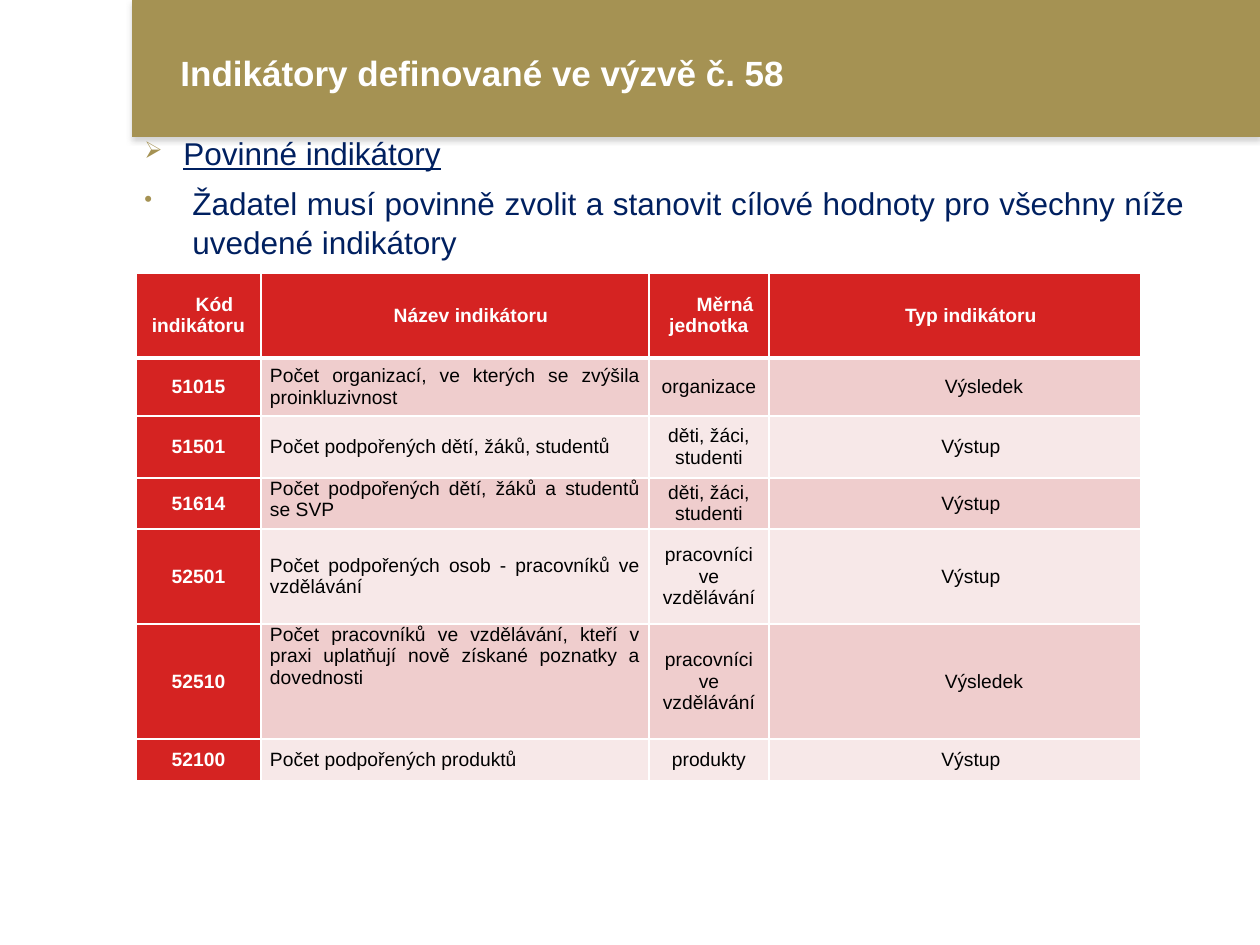
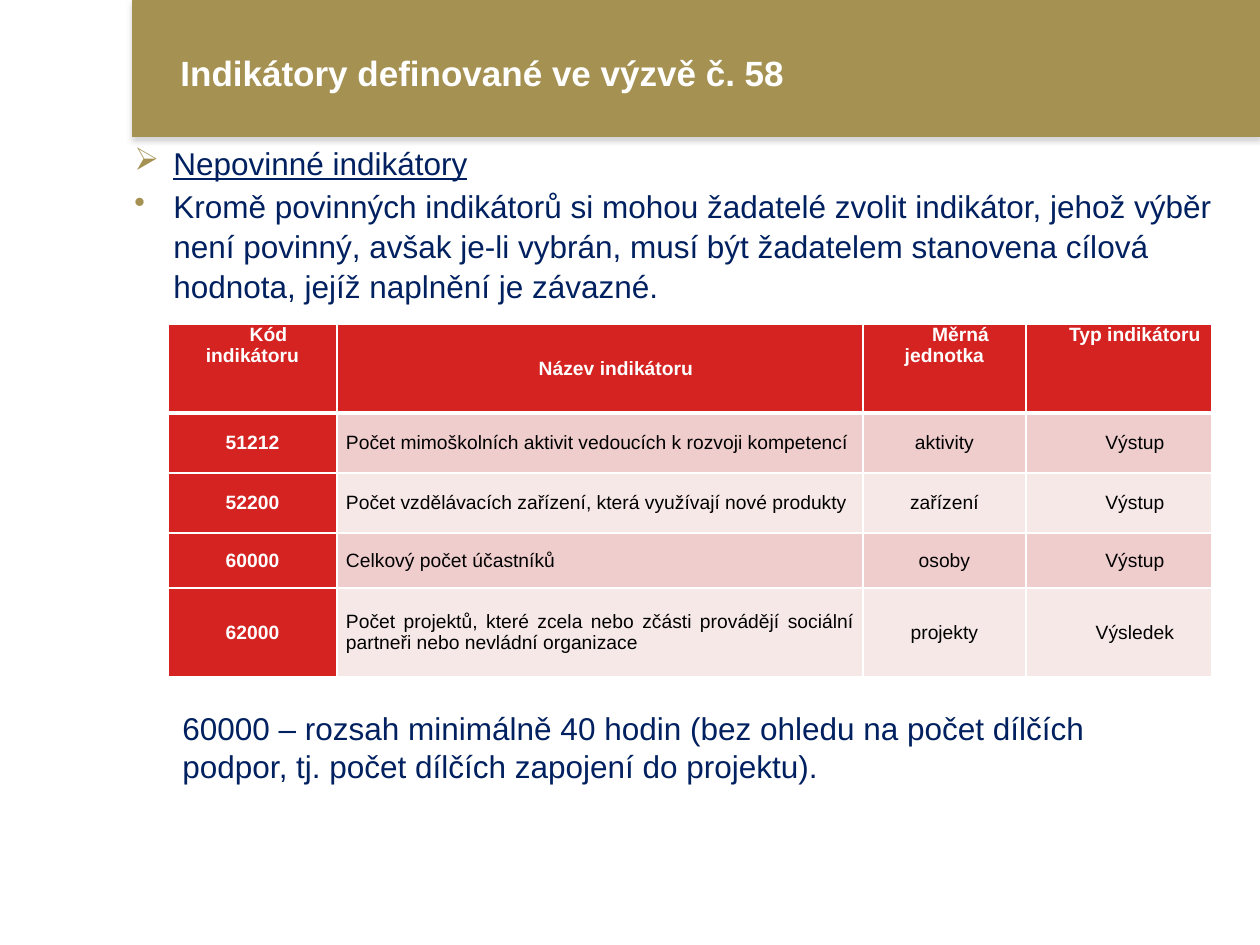
from dataclasses import dataclass

import pptx
import pptx.dml.color
import pptx.enum.shapes
import pptx.enum.text
import pptx.oxml
import pptx.oxml.ns
import pptx.util
from lxml import etree

ALIGN = pptx.enum.text.PP_ALIGN
ANCHOR = pptx.enum.text.MSO_ANCHOR
PX_PER_INCH = 126


@dataclass(frozen=True)
class Theme:
    font: str = "Arial"
    band: str = "A59253"
    shadow: str = "808080"
    body: str = "002060"
    head: str = "D52322"
    rows: tuple = ("EFCDCD", "F7E8E8")
    white: str = "FFFFFF"
    black: str = "000000"
    title_size: int = 20
    body_size: int = 18
    table_size: int = 11


THEME = Theme()
TITLE = "Indikátory definované ve výzvě č. 58"
HEADINGS = ("Kód indikátoru", "Název indikátoru", "Měrná jednotka", "Typ indikátoru")
INDENT = 32
WIDE_INDENT = 58
CELL_INSET = 9


@dataclass(frozen=True)
class Indicator:
    code: str
    name: str
    unit: str
    kind: str
    height: int
    indent: int = INDENT
    name_anchor: ANCHOR = ANCHOR.MIDDLE
    name_align: ALIGN = ALIGN.JUSTIFY


MANDATORY = (
    Indicator("51015", "Počet organizací, ve kterých se zvýšila proinkluzivnost",
              "organizace", "Výsledek", 58, WIDE_INDENT),
    Indicator("51501", "Počet podpořených dětí, žáků, studentů",
              "děti, žáci, studenti", "Výstup", 62),
    Indicator("51614", "Počet podpořených dětí, žáků a studentů se SVP",
              "děti, žáci, studenti", "Výstup", 51, name_anchor=ANCHOR.TOP),
    Indicator("52501", "Počet podpořených osob - pracovníků ve vzdělávání",
              "pracovníci ve vzdělávání", "Výstup", 95),
    Indicator("52510", "Počet pracovníků ve vzdělávání, kteří v praxi uplatňují "
              "nově získané poznatky a dovednosti",
              "pracovníci ve vzdělávání", "Výsledek", 115, WIDE_INDENT, ANCHOR.TOP),
    Indicator("52100", "Počet podpořených produktů", "produkty", "Výstup", 42),
)
OPTIONAL = (
    Indicator("51212", "Počet mimoškolních aktivit vedoucích k rozvoji kompetencí",
              "aktivity", "Výstup", 60),
    Indicator("52200", "Počet vzdělávacích zařízení, která využívají nové produkty",
              "zařízení", "Výstup", 60),
    Indicator("60000", "Celkový počet účastníků", "osoby", "Výstup", 55,
              name_align=ALIGN.LEFT),
    Indicator("62000", "Počet projektů, které zcela nebo zčásti provádějí sociální "
              "partneři nebo nevládní organizace", "projekty", "Výsledek", 89),
)


def px(n):
    return pptx.util.Emu(round(n * 914400 / PX_PER_INCH))


def rgb(color):
    return pptx.dml.color.RGBColor.from_string(color)


def add_xml(parent, tag, **attrs):
    el = etree.SubElement(parent, pptx.oxml.ns.qn(tag))
    for name, value in attrs.items():
        el.set(name, str(value))
    return el


def style(p, size, color, bold=False, underline=False):
    p.font.name = THEME.font
    p.font.size = pptx.util.Pt(size)
    p.font.color.rgb = rgb(color)
    p.font.bold = bold
    p.font.underline = underline


def text_box(slide, box):
    tf = slide.shapes.add_textbox(*map(px, box)).text_frame
    tf.word_wrap = True
    return tf


def bullet(p, char, indent, percent):
    pPr = p._p.get_or_add_pPr()
    pPr.set("marL", str(px(indent)))
    pPr.set("indent", str(px(-indent)))
    add_xml(add_xml(pPr, "a:buClr"), "a:srgbClr", val=THEME.band)
    add_xml(pPr, "a:buSzPct", val=percent * 1000)
    add_xml(pPr, "a:buChar", char=char)


def title_band(slide, box):
    x, y, w, h = box
    sp = slide.shapes.add_shape(pptx.enum.shapes.MSO_SHAPE.RECTANGLE, *map(px, box))
    sp.fill.solid()
    sp.fill.fore_color.rgb = rgb(THEME.band)
    sp.line.fill.background()
    sp.shadow.inherit = False
    effects = sp._element.spPr.find(pptx.oxml.ns.qn("a:effectLst"))
    shadow = add_xml(effects, "a:outerShdw", blurRad=pptx.util.Pt(3.1),
                     dist=pptx.util.Pt(1.8), dir=5400000, rotWithShape=0)
    add_xml(add_xml(shadow, "a:srgbClr", val=THEME.shadow), "a:alpha", val=35000)

    tf = text_box(slide, (x + 36, y + 50, w - 99, 44))
    tf.vertical_anchor = ANCHOR.MIDDLE
    p = tf.paragraphs[0]
    p.text = TITLE
    style(p, THEME.title_size, THEME.white, bold=True)


def intro(slide, box, heading, text, indents, percent, space_before, align):
    tf = text_box(slide, box)
    first, second = tf.paragraphs[0], tf.add_paragraph()
    for p, words, char, indent in zip((first, second), (heading, text), "➢•", indents):
        p.text = words
        bullet(p, char, indent, percent)
        p.line_spacing = 1.05
        p.space_after = pptx.util.Pt(2)
        style(p, THEME.body_size, THEME.body, underline=p is first)
    second.space_before = pptx.util.Pt(space_before)
    second.alignment = align


def border(cell, side, width):
    ln = add_xml(cell._tc.get_or_add_tcPr(), f"a:ln{side}", w=pptx.util.Pt(width))
    add_xml(add_xml(ln, "a:solidFill"), "a:srgbClr", val=THEME.white)


def fill_cell(cell, text, fill, color, bold, align, anchor, indent, top, bottom):
    cell.margin_left = cell.margin_right = px(CELL_INSET)
    cell.margin_top = cell.margin_bottom = 0
    cell.vertical_anchor = anchor
    for side, width in zip("LRTB", (1, 1, top, bottom)):
        border(cell, side, width)
    cell.fill.solid()
    cell.fill.fore_color.rgb = rgb(fill)
    p = cell.text_frame.paragraphs[0]
    p.text = text
    p.alignment = align
    p._p.get_or_add_pPr().set("indent", str(px(indent)))
    style(p, THEME.table_size, color, bold)


def indicator_table(slide, origin, widths, head_height, head_anchors, indicators):
    heights = [head_height] + [item.height for item in indicators]
    frame = slide.shapes.add_table(len(heights), len(widths), *map(
        px, (*origin, sum(widths), sum(heights))))
    table = frame.table
    table.horz_banding = False
    for column, width in zip(table.columns, widths):
        column.width = px(width)
    for row, height in zip(table.rows, heights):
        row.height = px(height)

    for col, (heading, anchor) in enumerate(zip(HEADINGS, head_anchors)):
        fill_cell(table.cell(0, col), heading, THEME.head, THEME.white, True,
                  ALIGN.CENTER, anchor, INDENT, 1, 3)
    for row, item in enumerate(indicators, 1):
        shade = THEME.rows[(row - 1) % 2]
        top = 3 if row == 1 else 1
        cells = (
            (item.code, THEME.head, THEME.white, True, ALIGN.CENTER, ANCHOR.MIDDLE, 0),
            (item.name, shade, THEME.black, False, item.name_align, item.name_anchor, 0),
            (item.unit, shade, THEME.black, False, ALIGN.CENTER, ANCHOR.MIDDLE, 0),
            (item.kind, shade, THEME.black, False, ALIGN.CENTER, ANCHOR.MIDDLE,
             item.indent),
        )
        for col, values in enumerate(cells):
            fill_cell(table.cell(row, col), *values, top, 1)


def note(slide, box, text):
    p = text_box(slide, box).paragraphs[0]
    p.text = text
    style(p, THEME.body_size, THEME.body)


def new_slide(prs):
    slide = prs.slides.add_slide(prs.slide_layouts[6])
    title_band(slide, (132, 0, 1128, 137))
    return slide


def mandatory_slide(prs):
    slide = new_slide(prs)
    intro(slide, (132, 126, 1065, 602), "Povinné indikátory",
          "Žadatel musí povinně zvolit a stanovit cílové hodnoty pro všechny níže "
          "uvedené indikátory", (39, 48), 74, 3.6, ALIGN.JUSTIFY)
    indicator_table(slide, (136, 273), (125, 388, 120, 372), 85,
                    (ANCHOR.MIDDLE,) * 4, MANDATORY)


def optional_slide(prs):
    slide = new_slide(prs)
    intro(slide, (122, 136, 1114, 291), "Nepovinné indikátory",
          "Kromě povinných indikátorů si mohou žadatelé zvolit indikátor, jehož výběr "
          "není povinný, avšak je-li vybrán, musí být žadatelem stanovena cílová "
          "hodnota, jejíž naplnění je závazné.", (39, 39), 100, 0, ALIGN.LEFT)
    indicator_table(slide, (168, 324), (169, 526, 163, 186), 89,
                    (ANCHOR.TOP, ANCHOR.MIDDLE, ANCHOR.TOP, ANCHOR.TOP), OPTIONAL)
    note(slide, (170, 703, 1016, 90),
         "60000 – rozsah minimálně 40 hodin (bez ohledu na počet dílčích podpor, "
         "tj. počet dílčích zapojení do projektu).")


def main():
    prs = pptx.Presentation()
    prs.slide_width, prs.slide_height = px(1260), px(945)
    mandatory_slide(prs)
    optional_slide(prs)
    prs.save("out.pptx")


if __name__ == "__main__":
    main()
